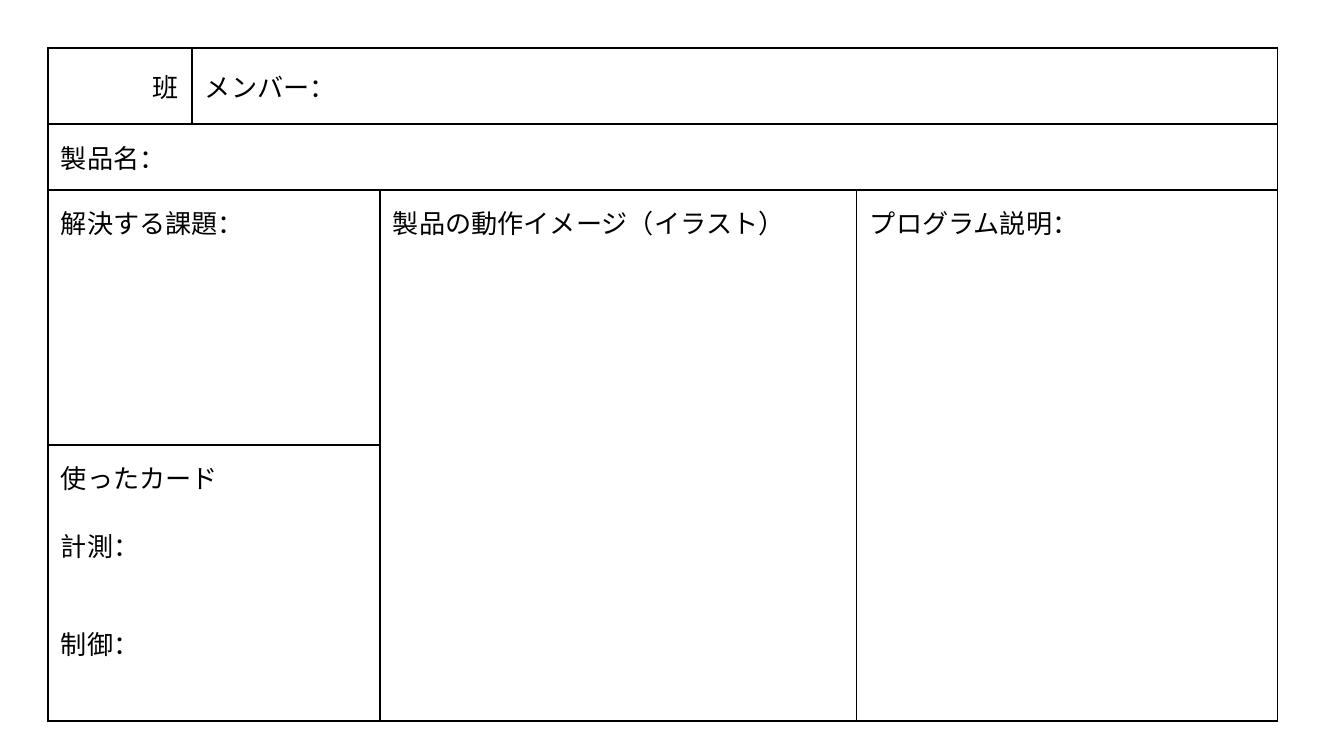
from dataclasses import dataclass

from lxml.etree import SubElement
from pptx import Presentation
from pptx.dml.color import RGBColor
from pptx.enum.text import MSO_ANCHOR as Anchor, PP_ALIGN as Align
from pptx.oxml.ns import qn
from pptx.util import Pt

EMU_PER_PX = 914400 / 134.4


@dataclass(frozen=True)
class Theme:
    font: str = "Arial"
    size: int = 14
    ink: str = "000000"
    line: float = 0.75
    inset: int = 13


THEME = Theme()
COLS = [144, 188, 477, 421]
ROWS = [76, 66, 255, 276]

# (row, column, last row, last column, anchor, alignment, [(text, space before)])
FIELDS = [
    (0, 0, 0, 0, Anchor.MIDDLE, Align.RIGHT, [("班", 0)]),
    (0, 1, 0, 3, Anchor.MIDDLE, Align.LEFT, [("メンバー：", 0)]),
    (1, 0, 1, 3, Anchor.MIDDLE, Align.LEFT, [("製品名：", 0)]),
    (2, 0, 2, 1, Anchor.TOP, Align.LEFT, [("解決する課題：", 0)]),
    (2, 2, 3, 2, Anchor.TOP, Align.LEFT, [("製品の動作イメージ（イラスト）", 0)]),
    (2, 3, 3, 3, Anchor.TOP, Align.LEFT, [("プログラム説明：", 0)]),
    (3, 0, 3, 1, Anchor.TOP, Align.LEFT,
     [("使ったカード", 0), ("計測：", 16), ("制御：", 32)]),
]


def px(n):
    return round(n * EMU_PER_PX)


def add_borders(cell):
    """Outline a cell; the lines must come before its fill."""
    tc_pr = cell._tc.get_or_add_tcPr()
    for i, side in enumerate(("lnL", "lnR", "lnT", "lnB")):
        ln = SubElement(tc_pr, qn(f"a:{side}"), w=str(Pt(THEME.line)))
        fill = SubElement(ln, qn("a:solidFill"))
        SubElement(fill, qn("a:srgbClr"), val=THEME.ink)
        tc_pr.insert(i, ln)


def style_cell(cell):
    cell.fill.background()
    cell.margin_left = cell.margin_right = px(THEME.inset)
    cell.margin_top = cell.margin_bottom = px(THEME.inset)
    add_borders(cell)


def write_cell(cell, lines, anchor, align):
    cell.vertical_anchor = anchor
    tf = cell.text_frame
    for i, (text, gap) in enumerate(lines):
        p = tf.add_paragraph() if i else tf.paragraphs[0]
        p.alignment = align
        p.space_before = Pt(gap)
        r = p.add_run()
        r.text = text
        r.font.name = THEME.font
        r.font.size = Pt(THEME.size)
        r.font.color.rgb = RGBColor.from_string(THEME.ink)


def add_worksheet(s, x, y):
    frame = s.shapes.add_table(len(ROWS), len(COLS), px(x), px(y),
                               px(sum(COLS)), px(sum(ROWS)))
    table = frame.table
    table.first_row = table.horz_banding = False
    for col, width in zip(table.columns, COLS):
        col.width = px(width)
    for row, height in zip(table.rows, ROWS):
        row.height = px(height)
    for cell in table.iter_cells():
        style_cell(cell)
    for row, col, last_row, last_col, anchor, align, lines in FIELDS:
        cell = table.cell(row, col)
        if (row, col) != (last_row, last_col):
            cell.merge(table.cell(last_row, last_col))
        write_cell(cell, lines, anchor, align)


def main():
    prs = Presentation()
    prs.slide_width, prs.slide_height = px(1344), px(756)
    s = prs.slides.add_slide(prs.slide_layouts[6])
    add_worksheet(s, 48, 48)
    prs.save("out.pptx")


if __name__ == "__main__":
    main()
